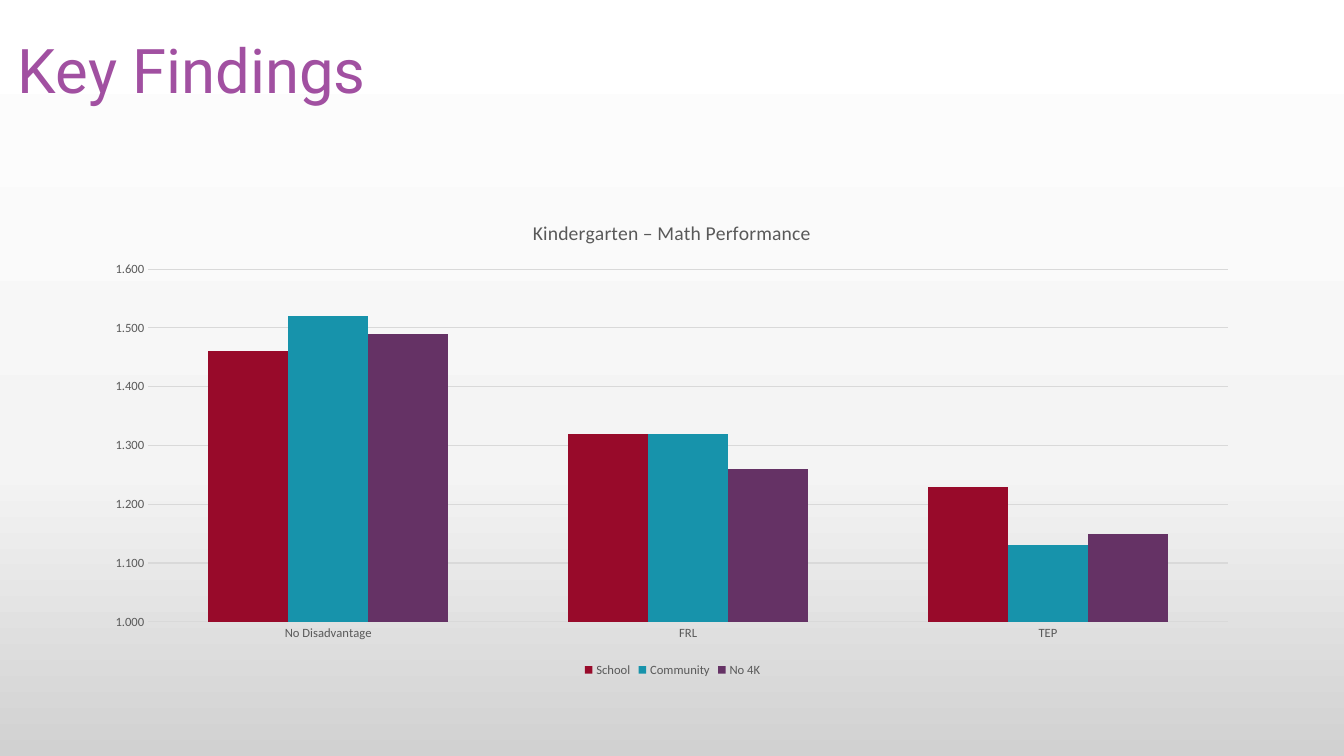
from copy import deepcopy
from dataclasses import dataclass
from typing import Any

from lxml.etree import SubElement
from pptx import Presentation
from pptx.chart.data import CategoryChartData as ChartData
from pptx.dml.color import RGBColor as Color
from pptx.enum.chart import XL_CHART_TYPE as ChartType
from pptx.enum.chart import XL_LEGEND_POSITION as LegendPosition
from pptx.enum.chart import XL_TICK_MARK as TickMark
from pptx.enum.text import MSO_ANCHOR as Anchor
from pptx.oxml.ns import qn
from pptx.util import Inches, Pt


@dataclass(frozen=True)
class Theme:
    heading_font: str = "Roboto"
    body_font: str = "Calibri"
    heading: str = "A150A1"
    label: str = "595959"
    grid: str = "D9D9D9"
    background: tuple = ((0, "FFFFFF"), (0.62, "F4F4F4"), (1, "D1D1D1"))
    heading_size: int = 44
    chart_title_size: int = 14
    label_size: int = 9
    grid_width: float = 0.75


@dataclass(frozen=True)
class Box:
    left: float
    top: float
    width: float
    height: float

    def inches(self) -> tuple:
        return tuple(map(Inches, (self.left, self.top, self.width, self.height)))


@dataclass(frozen=True)
class PreschoolSeries:
    name: str
    color: str
    scores: tuple


THEME = Theme()
HEADING_BOX = Box(0.08, 0, 11.5, 1.45)
CHART_BOX = Box(0.92, 2, 11.5, 4.76)
# Places inside the chart, in inches from its corner
CHART_TITLE_PLACE = {"x": 4.33, "y": 0.14}
PLOT_PLACE = {"x": 0.55, "y": 0.67, "w": 10.71, "h": 3.5}
GROUPS = ("No Disadvantage", "FRL", "TEP")
SERIES = (
    PreschoolSeries("School", "980A2A", (1.46, 1.32, 1.23)),
    PreschoolSeries("Community", "1793AB", (1.52, 1.32, 1.13)),
    PreschoolSeries("No 4K", "653265", (1.49, 1.26, 1.15)),
)
VALUE_AXIS_FORMAT = {
    "minimum_scale": 1,
    "maximum_scale": 1.6,
    "major_unit": 0.1,
    "has_major_gridlines": True,
}
TICK_FORMAT = {"major_tick_mark": TickMark.NONE, "minor_tick_mark": TickMark.NONE}
LEGEND_FORMAT = {"position": LegendPosition.BOTTOM, "include_in_layout": False}
PLOT_FORMAT = {"gap_width": 150, "overlap": 0, "vary_by_categories": False}


def apply_format(target: Any, values: dict) -> None:
    for name, value in values.items():
        setattr(target, name, value)


def style_font(font: Any, name: str, size: float, color: str) -> None:
    apply_format(font, {"name": name, "size": Pt(size), "bold": False})
    font.color.rgb = Color.from_string(color)


def style_line(line: Any) -> None:
    line.color.rgb = Color.from_string(THEME.grid)
    line.width = Pt(THEME.grid_width)


def place_part(part: Any, index: int, modes: dict, place: dict) -> None:
    """Give a chart part a fixed place, stored as fractions of the chart."""
    for old_layout in part.findall(qn("c:layout")):
        part.remove(old_layout)
    layout = SubElement(part, qn("c:layout"))
    part.insert(index, layout)
    manual = SubElement(layout, qn("c:manualLayout"))
    sides = {"x": CHART_BOX.width, "w": CHART_BOX.width,
             "y": CHART_BOX.height, "h": CHART_BOX.height}
    fractions = {name: length / sides[name] for name, length in place.items()}
    settings = {**modes, "xMode": "edge", "yMode": "edge", **fractions}
    for name, value in settings.items():
        SubElement(manual, qn(f"c:{name}")).set("val", str(value))


def paint_background(slide: Any) -> None:
    fill = slide.background.fill
    fill.gradient()
    fill.gradient_angle = 270
    stop_list = next(slide.element.iter(qn("a:gsLst")))
    stop_list.append(deepcopy(stop_list[0]))
    for stop, (position, color) in zip(fill.gradient_stops, THEME.background):
        stop.color.rgb = Color.from_string(color)
        stop.position = position


def add_heading(slide: Any, text: str) -> None:
    frame = slide.shapes.add_textbox(*HEADING_BOX.inches()).text_frame
    apply_format(frame, {"word_wrap": True, "vertical_anchor": Anchor.MIDDLE})
    paragraph = frame.paragraphs[0]
    paragraph.line_spacing = 0.9
    run = paragraph.add_run()
    run.text = text
    style_font(run.font, THEME.heading_font, THEME.heading_size, THEME.heading)


def add_score_chart(slide: Any, title: str) -> None:
    data = ChartData(number_format="0.000")
    data.categories = GROUPS
    for series in SERIES:
        data.add_series(series.name, series.scores)
    chart = slide.shapes.add_chart(
        ChartType.COLUMN_CLUSTERED, *CHART_BOX.inches(), data
    ).chart
    style_font(chart.font, THEME.body_font, THEME.label_size, THEME.label)

    # Chart title
    frame = chart.chart_title.text_frame
    frame.text = title
    title_font = frame.paragraphs[0].runs[0].font
    style_font(title_font, THEME.body_font, THEME.chart_title_size, THEME.label)
    place_part(chart.chart_title.element, 1, {}, CHART_TITLE_PLACE)

    # Columns
    plot = chart.plots[0]
    apply_format(plot, PLOT_FORMAT)
    for column, series in zip(plot.series, SERIES):
        column.format.fill.solid()
        column.format.fill.fore_color.rgb = Color.from_string(series.color)
    plot_area = next(chart.element.iter(qn("c:plotArea")))
    place_part(plot_area, 0, {"layoutTarget": "inner"}, PLOT_PLACE)

    # Axes
    for axis in (chart.category_axis, chart.value_axis):
        apply_format(axis, TICK_FORMAT)
        style_font(axis.tick_labels.font, THEME.body_font, THEME.label_size, THEME.label)
    style_line(chart.category_axis.format.line)
    apply_format(chart.value_axis, VALUE_AXIS_FORMAT)
    apply_format(chart.value_axis.tick_labels,
                 {"number_format": "0.000", "number_format_is_linked": False})
    chart.value_axis.format.line.fill.background()
    style_line(chart.value_axis.major_gridlines.format.line)

    # Legend
    chart.has_legend = True
    apply_format(chart.legend, LEGEND_FORMAT)
    style_font(chart.legend.font, THEME.body_font, THEME.label_size, THEME.label)


def main() -> None:
    presentation = Presentation()
    apply_format(presentation, {"slide_width": Inches(13.33), "slide_height": Inches(7.5)})
    slide = presentation.slides.add_slide(presentation.slide_layouts[6])
    paint_background(slide)
    add_heading(slide, "Key Findings")
    add_score_chart(slide, "Kindergarten – Math Performance")
    presentation.save("out.pptx")


if __name__ == "__main__":
    main()
